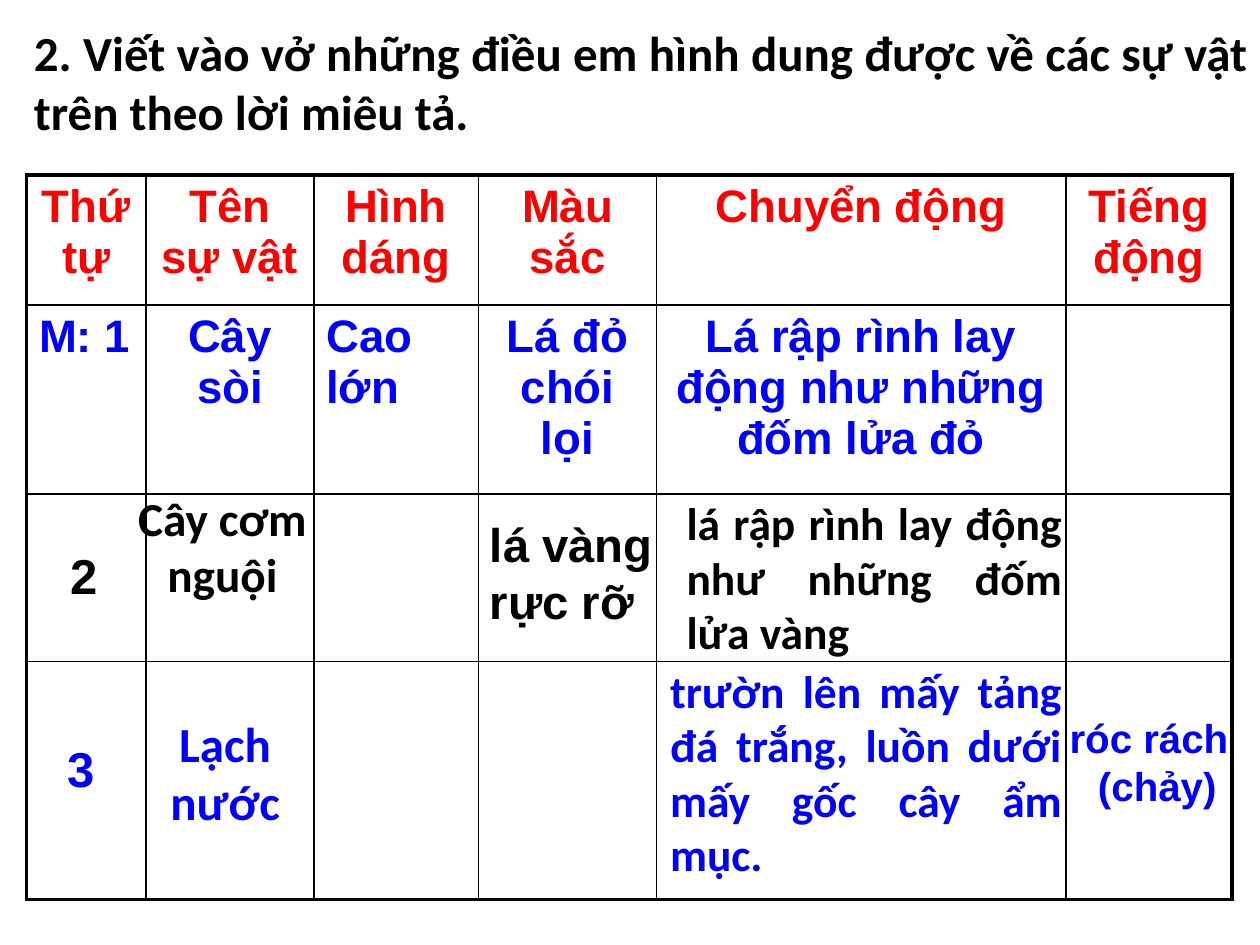
"""Build a Vietnamese worksheet slide: a table of described things with answers."""
from typing import NamedTuple

import pptx
import pptx.dml.color
import pptx.enum.text
import pptx.oxml
import pptx.oxml.ns
import pptx.util

Pt = pptx.util.Pt
Align = pptx.enum.text.PP_ALIGN
BLACK, BLUE, RED = "000000", "0000FF", "FF0000"
COLUMN_WIDTHS = [68.4, 95.8, 94.3, 101.5, 234, 95]
ROW_HEIGHTS = [74.2, 108, 95.8, 136]
HEADINGS = ["Thứ tự", "Tên sự vật", "Hình dáng", "Màu sắc", "Chuyển động", "Tiếng động"]
EXAMPLE = ["M: 1", "Cây sòi", "Cao lớn", "Lá đỏ chói lọi",
           "Lá rập rình lay động như những đốm lửa đỏ", ""]
LEFT_ALIGNED = {"M: 1", "Cao lớn"}


class Answer(NamedTuple):
    text: str
    left: float
    top: float
    width: float
    height: float
    size: float
    font: str = "Calibri"
    color: str = BLACK
    aligns: tuple = (Align.LEFT,)


ANSWERS = [
    Answer("Cây cơm nguội", 67.7, 275.8, 118.8, 105, 27, aligns=(Align.CENTER,)),
    Answer("2", 33.1, 308.2, 30.2, 41, 28, "Arial"),
    Answer("lá vàng rực rỡ", 272.9, 290.9, 116, 72.7, 27, "Arial"),
    Answer("lá rập rình lay động như những đốm lửa vàng", 385.2, 279.4, 229, 101.5, 26,
           aligns=(Align.JUSTIFY,)),
    Answer("Lạch nước", 70.6, 403.9, 116, 75, 28, color=BLUE, aligns=(Align.CENTER,)),
    Answer("trườn lên mấy tảng đá trắng, luồn dưới mấy gốc cây ẩm mục.",
           375.8, 375.1, 238.3, 133.2, 26, color=BLUE, aligns=(Align.JUSTIFY,)),
    Answer("róc rách\n(chảy)", 604.1, 403.9, 114.5, 65.5, 23, "Arial", BLUE,
           (Align.JUSTIFY, Align.CENTER)),
    Answer("3", 31.7, 418.3, 29.5, 41, 28, "Arial", BLUE),
]


def rgb(color: str) -> pptx.dml.color.RGBColor:
    return pptx.dml.color.RGBColor.from_string(color)


def write(frame, text: str, *, size: float, font: str, color: str, aligns: tuple) -> None:
    frame.word_wrap = True
    frame.text = text
    for para, align in zip(frame.paragraphs, aligns):
        para.alignment = align
        for span in para.runs:
            span.font.size = Pt(size)
            span.font.name = font
            span.font.bold = True
            span.font.color.rgb = rgb(color)


def set_border(cell, side: str, width: float) -> None:
    cell._tc.get_or_add_tcPr().append(pptx.oxml.parse_xml(
        f'<a:ln{side} {pptx.oxml.ns.nsdecls("a")} w="{Pt(width)}">'
        f'<a:solidFill><a:srgbClr val="{BLACK}"/></a:solidFill></a:ln{side}>'))


def draw_title(page) -> None:
    title = page.shapes.title
    title.left, title.top, title.width, title.height = Pt(12.2), Pt(9.4), Pt(707.8), Pt(75)
    frame = title.text_frame
    write(frame, "2. Viết vào vở những điều em hình dung được về các sự vật trên theo lời miêu tả.",
          size=28, font="Calibri", color=BLACK, aligns=(Align.JUSTIFY,))
    frame.auto_size = pptx.enum.text.MSO_AUTO_SIZE.NONE
    frame.vertical_anchor = pptx.enum.text.MSO_ANCHOR.TOP


def draw_table(page) -> None:
    last_row, last_column = len(ROW_HEIGHTS) - 1, len(COLUMN_WIDTHS) - 1
    table = page.shapes.add_table(last_row + 1, last_column + 1, Pt(15.1), Pt(100.1),
                                  Pt(sum(COLUMN_WIDTHS)), Pt(sum(ROW_HEIGHTS))).table
    table.first_row = table.horz_banding = False
    for column, width in zip(table.columns, COLUMN_WIDTHS):
        column.width = Pt(width)
    for row, height in zip(table.rows, ROW_HEIGHTS):
        row.height = Pt(height)
    for r, row in enumerate(table.rows):
        for c, cell in enumerate(row.cells):
            outer = {"L": c == 0, "R": c == last_column, "T": r == 0, "B": r == last_row}
            for side, is_outer in outer.items():
                set_border(cell, side, 2.25 if is_outer else 1)
            cell.fill.background()
    for r, (texts, color) in enumerate([(HEADINGS, RED), (EXAMPLE, BLUE)]):
        for c, text in enumerate(texts):
            align = Align.LEFT if text in LEFT_ALIGNED else Align.CENTER
            write(table.cell(r, c).text_frame, text, size=26, font="Arial",
                  color=color, aligns=(align,))


def draw_answer(page, answer: Answer) -> None:
    box = page.shapes.add_textbox(Pt(answer.left), Pt(answer.top),
                                  Pt(answer.width), Pt(answer.height))
    write(box.text_frame, answer.text, size=answer.size, font=answer.font,
          color=answer.color, aligns=answer.aligns)


def main() -> None:
    deck = pptx.Presentation()
    deck.slide_width, deck.slide_height = Pt(720), Pt(540)
    page = deck.slides.add_slide(deck.slide_layouts.get_by_name("Title Only"))
    draw_title(page)
    draw_table(page)
    for answer in ANSWERS:
        draw_answer(page, answer)
    deck.save("out.pptx")


if __name__ == "__main__":
    main()
